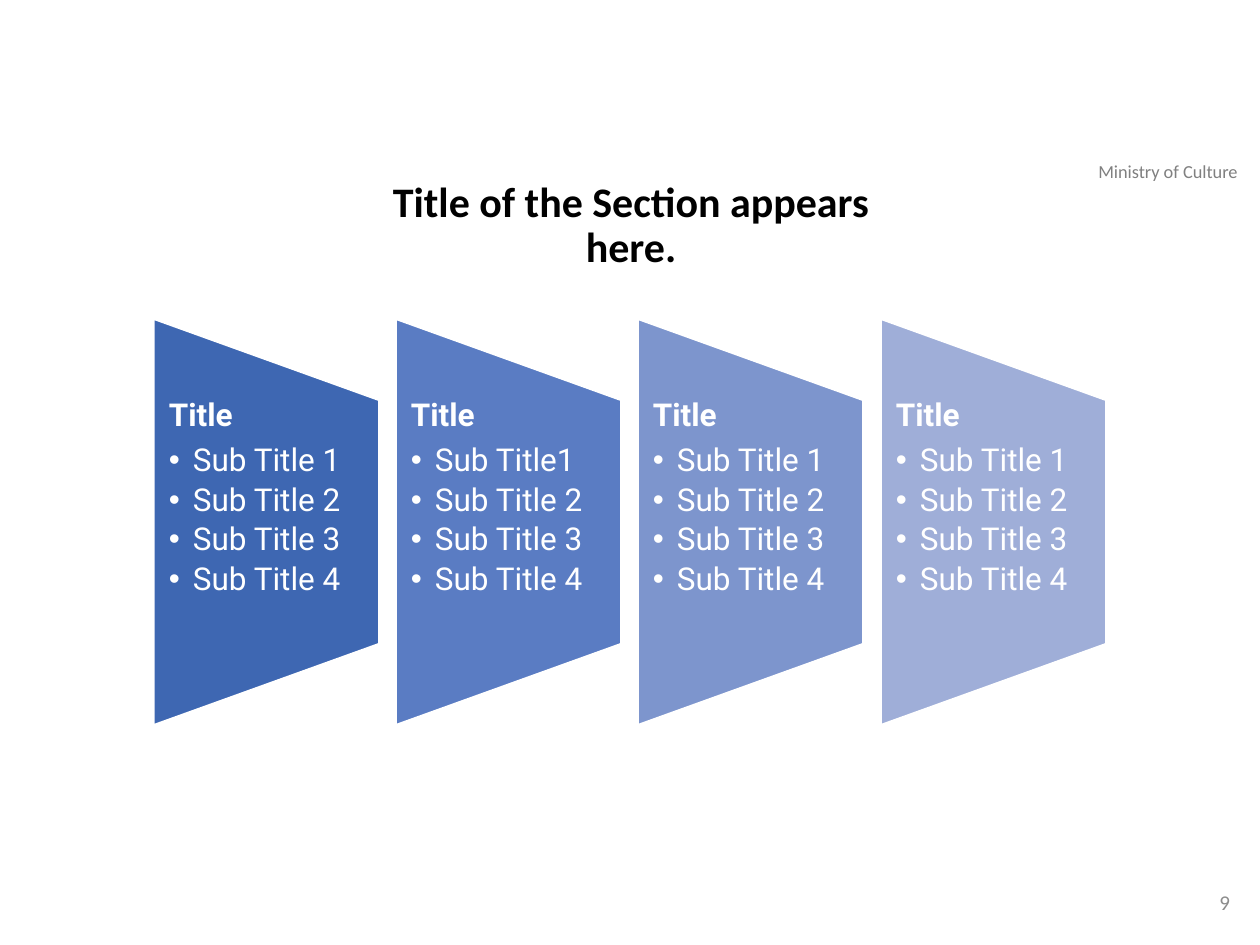
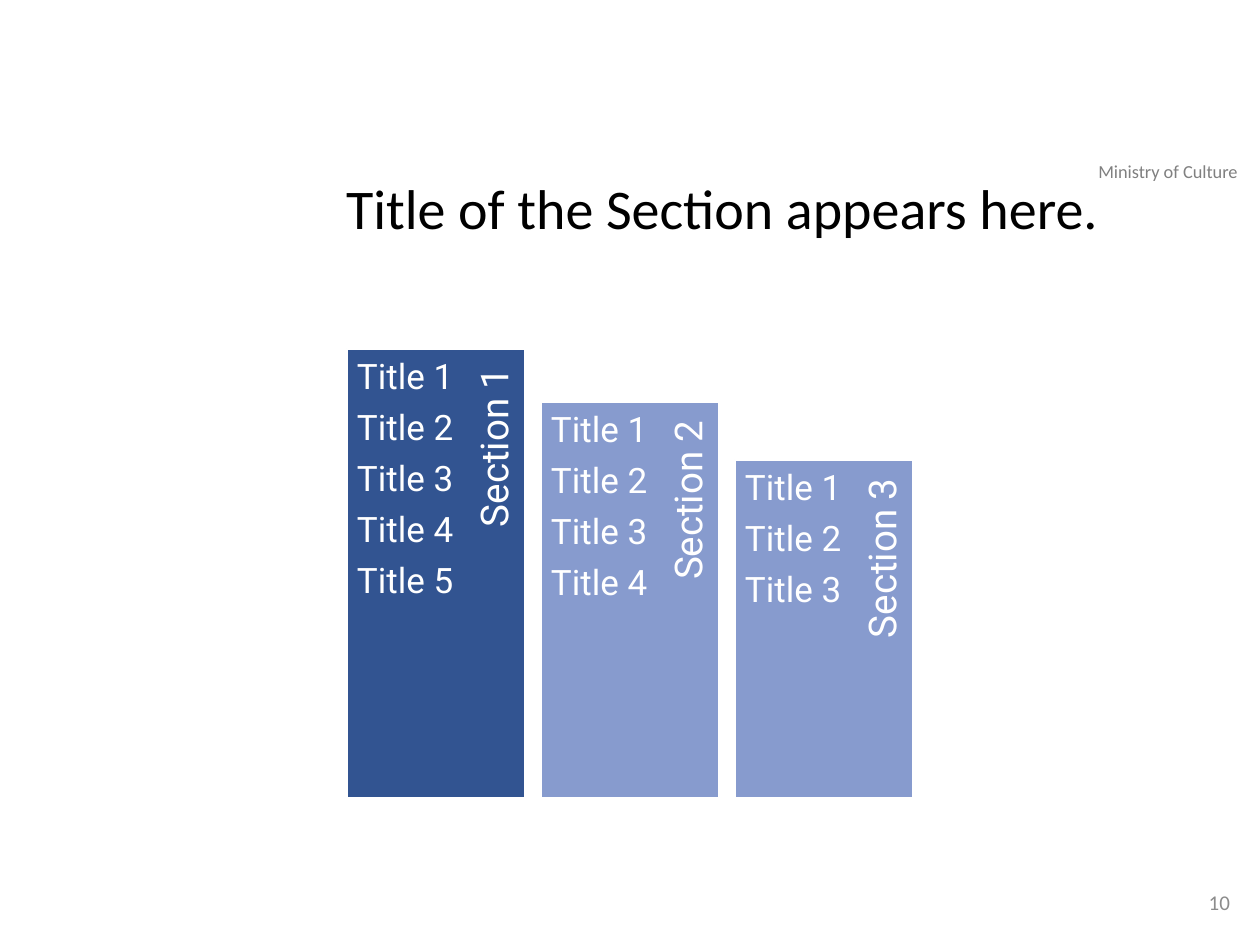
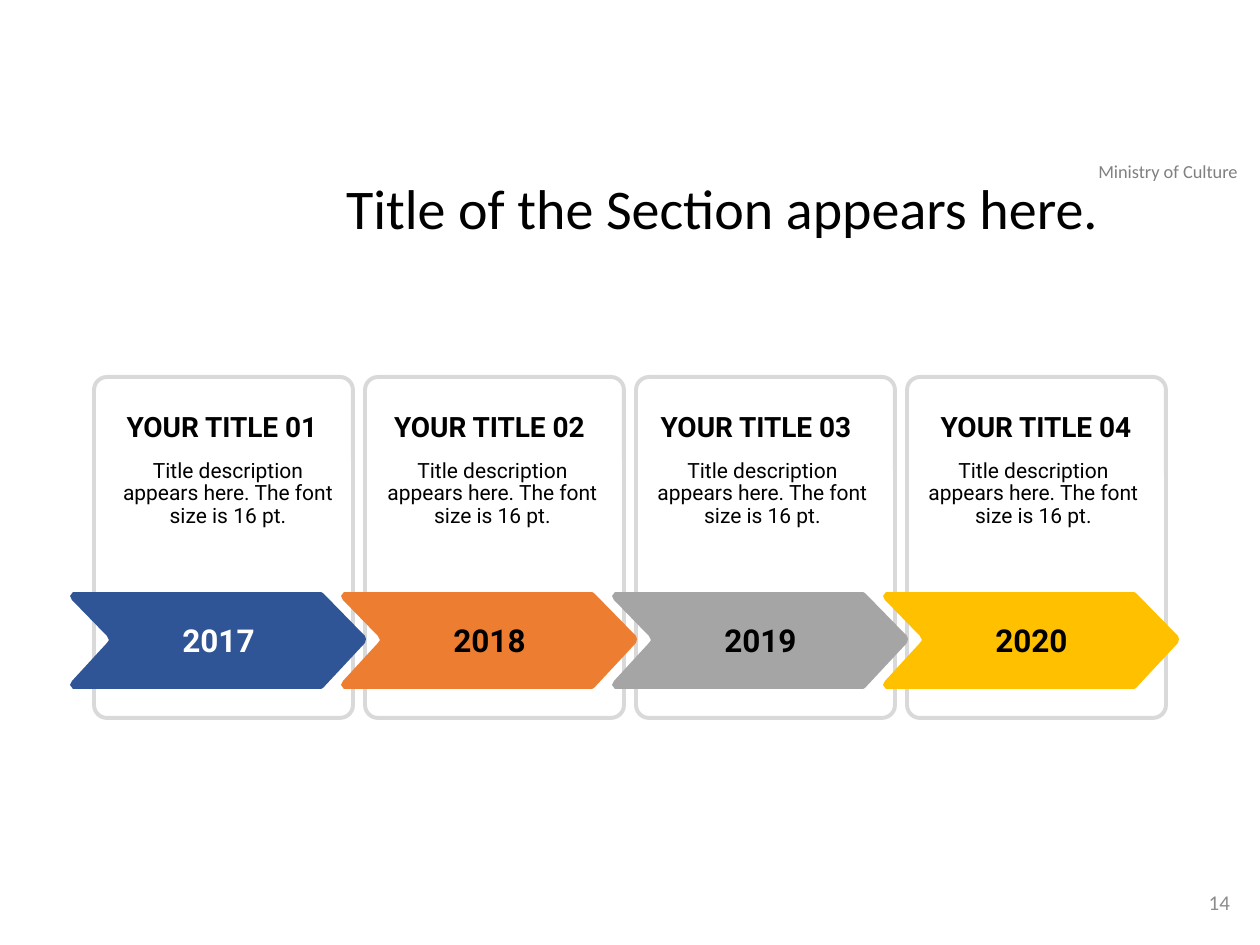
"""Build three section slides: trapezoid lists, stepped bars and a timeline."""
from lxml import etree
from pptx import Presentation
from pptx import util as u
from pptx.dml.color import RGBColor
from pptx.enum import shapes, text
from pptx.oxml import ns

SCALE = 914400 / 126
COLORS = {
    "black": "000000", "white": "FFFFFF", "ministry": "808080", "number": "8C8C8C",
    "list 1": "3E67B2", "list 2": "5A7CC3", "list 3": "7D95CD", "list 4": "9FAED8",
    "bar dark": "325491", "bar light": "879BCE", "card": "D9D9D9",
    "2017": "2F5597", "2018": "ED7D31", "2019": "A5A5A5", "2020": "FFC000",
}
LEFT, CENTER, RIGHT = text.PP_ALIGN.LEFT, text.PP_ALIGN.CENTER, text.PP_ALIGN.RIGHT
TOP, MIDDLE, BOTTOM = text.MSO_ANCHOR.TOP, text.MSO_ANCHOR.MIDDLE, text.MSO_ANCHOR.BOTTOM
SECTION_TITLE = "Title of the Section appears here."
DESCRIPTION = "Title description appears here. The font size is 16 pt."
ARROW_OUTLINE = [
    (38, 44), (3, 8), (1, 4), (4, 0), (252, 0), (254, 1), (296, 44), (297, 47),
    (296, 51), (254, 96), (252, 97), (4, 97), (1, 93), (3, 89), (38, 51), (40, 48),
]


def px(length):
    """Turn pixels into EMU."""
    return u.Emu(round(length * SCALE))


def rgb(name):
    """Look up a colour by name."""
    return RGBColor.from_string(COLORS[name])


def style(paragraph, size, color, font="Roboto", bold=False, align=LEFT, spacing=None, after=0):
    """Format one paragraph."""
    paragraph.alignment = align
    if spacing:
        paragraph.line_spacing = spacing
    paragraph.space_before = u.Pt(0)
    paragraph.space_after = u.Pt(after)
    face = paragraph.font
    face.name, face.size, face.bold = font, u.Pt(size), bold
    face.color.rgb = rgb(color)


def set_frame(frame, anchor=TOP, insets=(13, 6, 13, 6)):
    """Set wrapping, anchor and insets of a text frame."""
    frame.word_wrap = True
    frame.auto_size = text.MSO_AUTO_SIZE.NONE
    frame.vertical_anchor = anchor
    frame.margin_left, frame.margin_top, frame.margin_right, frame.margin_bottom = map(px, insets)


def add_text(slide, box, lines, size, color, anchor=TOP, insets=(13, 6, 13, 6), **look):
    """Add a text box with one paragraph per line."""
    label = slide.shapes.add_textbox(*map(px, box))
    set_frame(label.text_frame, anchor, insets)
    label.text_frame.text = "\n".join(lines)
    for paragraph in label.text_frame.paragraphs:
        style(paragraph, size, color, **look)
    return label


def add_block(slide, preset, box, fill=None, line="white", width=1):
    """Add a flat preset shape."""
    block = slide.shapes.add_shape(preset, *map(px, box))
    block.shadow.inherit = False
    if fill:
        block.fill.solid()
        block.fill.fore_color.rgb = rgb(fill)
    else:
        block.fill.background()
    block.line.color.rgb = rgb(line)
    block.line.width = u.Pt(width)
    return block


def add_bullet(paragraph, indent):
    """Give a paragraph a hanging round bullet."""
    properties = paragraph._p.get_or_add_pPr()
    properties.set("marL", str(px(indent)))
    properties.set("indent", str(-px(indent)))
    etree.SubElement(properties, ns.qn("a:buFont"), typeface="Arial")
    etree.SubElement(properties, ns.qn("a:buChar"), char="•")


def add_section_slide(deck, number, title_width=834, size=32, bold=False, align=LEFT):
    """Add a slide with the section title, ministry name and page number."""
    slide = deck.slides.add_slide(deck.slide_layouts[5])
    title = slide.shapes.title
    title.left, title.top, title.width, title.height = map(px, (333, 175, title_width, 100))
    title.text_frame.text = SECTION_TITLE
    set_frame(title.text_frame)
    style(title.text_frame.paragraphs[0], size, "black", "Calibri", bold, align, 0.9)
    add_text(slide, (1076, 154, 184, 35), ["Ministry of Culture"], 10.5, "ministry",
             font="Calibri", align=CENTER)
    add_text(slide, (960, 877, 283, 50), [str(number)], 12, "number", MIDDLE,
             font="Calibri", align=RIGHT)
    return slide


def add_trapezoid_list(slide, offset, fill, subtitles):
    """Add a sideways trapezoid with a heading and bullets."""
    trapezoid = add_block(slide, shapes.MSO_SHAPE.FLOWCHART_MANUAL_OPERATION,
                          (63 + offset, 409, 407, 226), fill, width=1.5)
    trapezoid.rotation = 270
    entries = slide.shapes.add_textbox(*map(px, (154 + offset, 399, 226, 244))).text_frame
    set_frame(entries, insets=(15, 0, 15, 0))
    entries.text = "\n".join(["Title", *subtitles])
    heading, *bullets = entries.paragraphs
    style(heading, 18, "white", bold=True, spacing=0.9, after=6.7)
    for bullet in bullets:
        add_bullet(bullet, 24)
        style(bullet, 18, "white", spacing=0.9, after=3.1)


def add_section_bar(slide, left, top, fill, section, count):
    """Add a bar with its titles and an upright section label."""
    height = 798 - top
    add_block(slide, shapes.MSO_SHAPE.RECTANGLE, (left, top, 178, height), fill)
    length, thickness = round(0.9 * height), 47
    middle_x, middle_y = left + 151, top + length // 2
    label = add_text(slide, (middle_x - length // 2, middle_y - thickness // 2, length, thickness),
                     [section], 22, "white", MIDDLE, (11, 0, 18, 4), align=RIGHT, spacing=0.9)
    label.rotation = 270
    add_text(slide, (left, top, 126, height), [f"Title {n}" for n in range(1, count + 1)],
             20, "white", insets=(10, 10, 10, 10), spacing=0.9, after=7.5)


def add_card(slide, left):
    """Add an outlined rounded card."""
    card = add_block(slide, shapes.MSO_SHAPE.ROUNDED_RECTANGLE, (left, 377, 259, 341),
                     line="card", width=2.25)
    card.adjustments[0] = 0.05


def add_year_arrow(slide, offset, year, color):
    """Add a notched arrow with its year."""
    outline = slide.shapes.build_freeform(*ARROW_OUTLINE[0], scale=SCALE)
    outline.add_line_segments(ARROW_OUTLINE[1:], close=True)
    arrow = outline.convert_to_shape(px(69 + offset), px(592))
    arrow.shadow.inherit = False
    arrow.fill.solid()
    arrow.fill.fore_color.rgb = rgb(year)
    arrow.line.fill.background()
    add_text(slide, (166 + offset, 615, 105, 50), [year], 18, color, MIDDLE,
             bold=True, align=CENTER)


def build_lists(deck):
    """Build the slide of four trapezoid lists."""
    slide = add_section_slide(deck, 9, 596, 24, True, CENTER)
    for i in range(4):
        first = "Sub Title1" if i == 1 else "Sub Title 1"
        add_trapezoid_list(slide, i * 727 // 3, f"list {i + 1}",
                           [first, "Sub Title 2", "Sub Title 3", "Sub Title 4"])


def build_bars(deck):
    """Build the slide of three stepped bars."""
    slide = add_section_slide(deck, 10)
    bars = [(349, "bar dark", 5), (402, "bar light", 4), (460, "bar light", 3)]
    for i, (top, fill, count) in enumerate(bars):
        add_section_bar(slide, 347 + 194 * i, top, fill, f"Section {i + 1}", count)


def build_timeline(deck):
    """Build the slide of four dated cards."""
    slide = add_section_slide(deck, 14)
    step = 271
    steps = [
        ("2017", "white", (103, 238), (111, 234)),
        ("2018", "black", (375, 229), (381, 223)),
        ("2019", "black", (639, 234), (651, 223)),
        ("2020", "black", (917, 238), (922, 223)),
    ]
    for i in range(len(steps)):
        add_card(slide, 94 + step * i)
    for i, (year, color, heading, description) in enumerate(steps):
        add_year_arrow(slide, step * i, year, color)
        add_text(slide, (heading[0], 402, heading[1], 47), [f"YOUR TITLE {i + 1:02}"], 16,
                 "black", BOTTOM, bold=True, align=CENTER)
        add_text(slide, (description[0], 457, description[1], 73), [DESCRIPTION], 12,
                 "black", insets=(5, 3, 5, 3), align=CENTER, spacing=0.9)


def main():
    """Build and save the deck."""
    deck = Presentation()
    deck.slide_width, deck.slide_height = px(1260), px(945)
    build_lists(deck)
    build_bars(deck)
    build_timeline(deck)
    deck.save("out.pptx")


if __name__ == "__main__":
    main()
